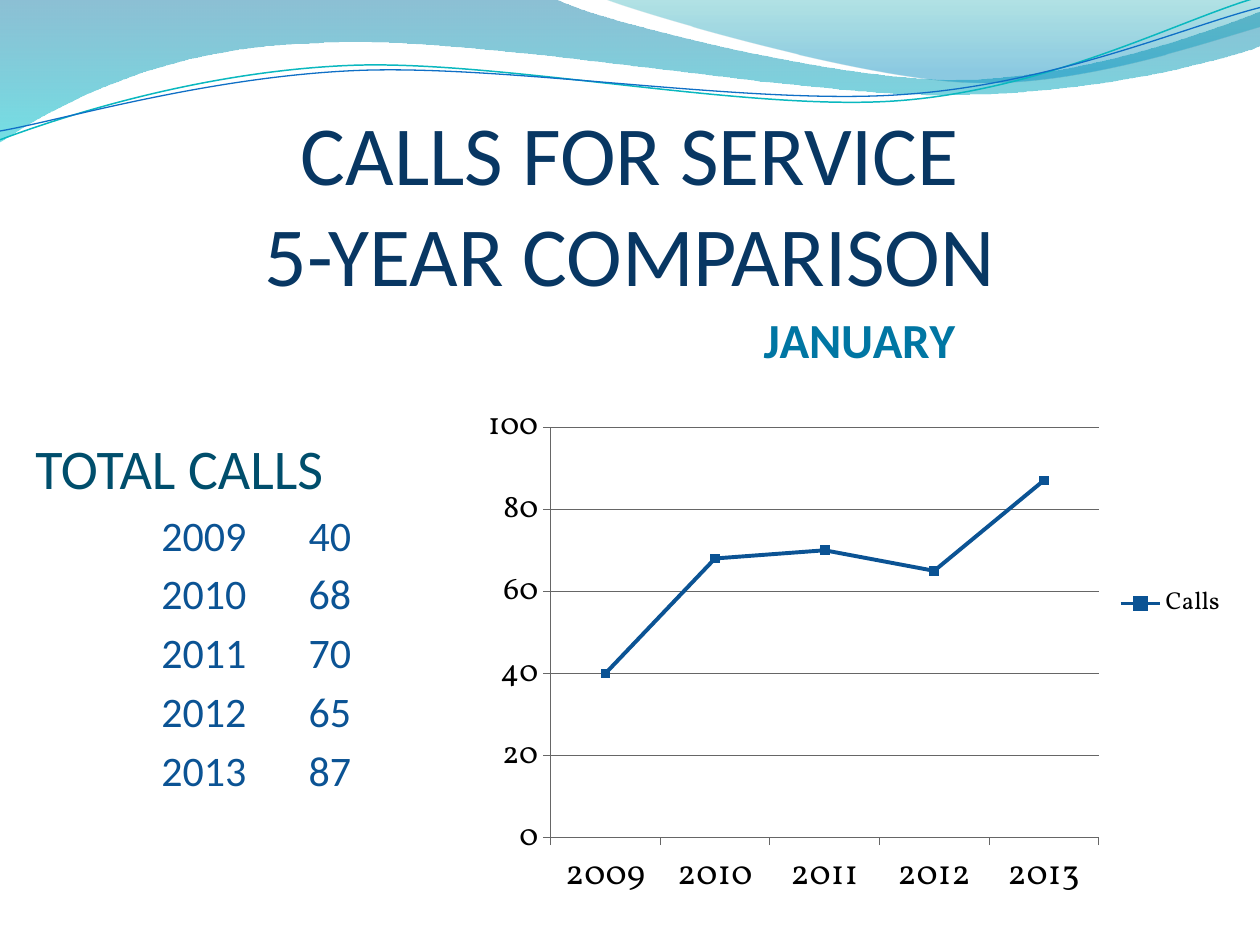
from dataclasses import dataclass

from lxml.etree import SubElement
from pptx import Presentation
from pptx.chart.data import CategoryChartData
from pptx.dml.color import RGBColor
from pptx.enum.chart import (XL_CHART_TYPE as ChartType, XL_LEGEND_POSITION as LegendPosition,
                             XL_MARKER_STYLE as Marker, XL_TICK_MARK as Tick)
from pptx.enum.text import MSO_ANCHOR as Anchor, MSO_AUTO_SIZE as AutoSize, PP_ALIGN as Align
from pptx.oxml import parse_xml
from pptx.oxml.ns import nsdecls, qn
from pptx.util import Inches, Pt


@dataclass(frozen=True)
class Theme:
    text_font: str = "Calibri"
    chart_font: str = "Vollkorn"
    title: str = "083763"
    heading: str = "004E6C"
    rows: str = "0B5394"
    chart_title: str = "0076A3"
    chart_text: str = "000000"
    grid: str = "666666"
    title_size: int = 48
    heading_size: int = 32
    row_size: int = 24
    chart_title_size: int = 28
    category_size: int = 20
    value_size: int = 18
    legend_size: int = 14


theme = Theme()
calls = {"2009": 40, "2010": 68, "2011": 70, "2012": 65, "2013": 87}


def style_font(font, size, color, name=theme.text_font, bold=False):
    values = {"size": Pt(size), "name": name, "bold": bold}
    for key, value in values.items():
        setattr(font, key, value)
    font.color.rgb = RGBColor.from_string(color)


def add_wave(page, start, segments, closed):
    """Outline of cubic curves (6 numbers) and straight lines (2 numbers), in inches."""
    corners = [(Inches(x), Inches(y)) for segment in segments
               for x, y in zip(segment[::2], segment[1::2])]
    builder = page.shapes.build_freeform(Inches(start[0]), Inches(start[1]), scale=1.0)
    builder.add_line_segments(corners, close=closed)
    wave = builder.convert_to_shape()
    wave.shadow.inherit = False
    # Join each three points of a curve into one cubic step
    steps = iter(list(wave._element.iter(qn("a:lnTo"))))
    for segment in segments:
        group = [next(steps) for _ in range(len(segment) // 2)]
        if len(group) == 3:
            curve = SubElement(group[0].getparent(), qn("a:cubicBezTo"))
            group[0].addprevious(curve)
            for step in group:
                curve.append(step[0])
                step.getparent().remove(step)
    return wave


deck = Presentation()
deck.slide_width, deck.slide_height = Inches(10), Inches(7.5)
page = deck.slides.add_slide(deck.slide_layouts[1])

# Translucent wave bands: start, segments, gradient stops (position, colour, opacity)
bands = [
    ((0, 0), [(4.4, -0.01), (4.76, 0.17, 6.64, 0.63, 7.58, 0.63),
              (8.53, 0.63, 9.58, 0.26, 10, 0.09), (10.01, 0.36),
              (9.83, 0.44, 8.7, 0.76, 7.46, 0.75), (6.22, 0.75, 3.82, 0.28, 2.57, 0.34),
              (1.29, 0.36, 0.46, 0.83, -0.01, 1.13)],
     [(0, "0074A1", 45), (100, "00C6CF", 55)]),
    ((4.79, -0.01), [(5.09, 0.11, 6.82, 0.62, 7.69, 0.65),
                     (8.56, 0.69, 9.61, 0.32, 10, 0.21), (10, 0)],
     [(0, "00A1A9", 30), (80, "008BBF", 45)]),
]
for start, segments, stops in bands:
    band = add_wave(page, start, segments, True)
    band.line.fill.background()
    band.fill.gradient()
    gradient = band.fill._xPr.find(qn("a:gradFill"))
    gradient.find(qn("a:lin")).set("ang", "5400000")
    stop_list = gradient.find(qn("a:gsLst"))
    stop_list.clear()
    for position, color, opacity in stops:
        stop = SubElement(stop_list, qn("a:gs"), pos=str(position * 1000))
        tint = SubElement(stop, qn("a:srgbClr"), val=color)
        SubElement(tint, qn("a:alpha"), val=str(opacity * 1000))

# Thin wave lines
strands = [
    ((0, 1.11), [(0.48, 0.93, 1.58, 0.57, 2.77, 0.52), (3.95, 0.47, 5.93, 0.89, 7.13, 0.8),
                 (8.33, 0.71, 9.38, 0.15, 9.98, -0.02)], "0AB8BF", 0.85),
    ((0, 1.04), [(0.47, 0.96, 1.64, 0.61, 2.83, 0.56), (4.03, 0.51, 5.97, 0.84, 7.17, 0.75),
                 (8.36, 0.67, 9.41, 0.21, 10, 0.06)], "0F6FC6", 0.75),
]
for start, segments, color, width in strands:
    strand = add_wave(page, start, segments, False)
    strand.fill.background()
    strand.line.color.rgb = RGBColor.from_string(color)
    strand.line.width = Pt(width)

# Title and list placeholders
title, body = page.shapes.title, page.placeholders[1]
frames = [
    (title, (0.5, 1.16, 9, 1.25), Anchor.BOTTOM, (0, 0.05, 0, 0)),
    (body, (-0.25, 3.39, 3.92, 4.07), Anchor.TOP, (0.41, 0.05, 0.1, 0.05)),
]
for box, place, anchor, insets in frames:
    for side, value in zip(("left", "top", "width", "height"), place):
        setattr(box, side, Inches(value))
    for side, value in zip(("left", "top", "right", "bottom"), insets):
        setattr(box.text_frame, f"margin_{side}", Inches(value))
    box.text_frame.auto_size = AutoSize.NONE
    box.text_frame.vertical_anchor = anchor
    box.text_frame.word_wrap = True

title.text_frame.text = "CALLS FOR SERVICE\v5-YEAR COMPARISON"
heading = title.text_frame.paragraphs[0]
heading.alignment = Align.CENTER
for span in heading.runs:
    style_font(span.font, theme.title_size, theme.title)

# Total calls: indented years, counts on the half-inch tab grid
lines = ["TOTAL CALLS"] + [f"{year}\t\t{count}" for year, count in calls.items()]
body.text_frame.text = "\n".join(lines)
for index, para in enumerate(body.text_frame.paragraphs):
    size, color, margin = ((theme.row_size, theme.rows, 1) if index
                           else (theme.heading_size, theme.heading, 0))
    para.space_before = Pt(size * 0.2)
    for span in para.runs:
        style_font(span.font, size, color)
    settings = para._p.get_or_add_pPr()
    for key, value in {"marL": margin, "indent": 0.12, "defTabSz": 0.5}.items():
        settings.set(key, str(Inches(value)))
    SubElement(settings, qn("a:buNone"))

# Line chart
chart_left, chart_top, chart_width, chart_height = 3.75, 2.33, 6.08, 4.92
data = CategoryChartData()
data.categories = list(calls)
data.add_series("Calls", list(calls.values()))
chart = page.shapes.add_chart(ChartType.LINE_MARKERS, Inches(chart_left), Inches(chart_top),
                              Inches(chart_width), Inches(chart_height), data).chart
style_font(chart.font, 10, theme.chart_text, theme.chart_font)
chart.has_title = True
chart.chart_title.include_in_layout = False
chart.chart_title.text_frame.text = "JANUARY"
style_font(chart.chart_title.text_frame.paragraphs[0].runs[0].font,
           theme.chart_title_size, theme.chart_title, bold=True)
chart.has_legend = True
chart.legend.position = LegendPosition.RIGHT
chart.legend.include_in_layout = False
style_font(chart.legend.font, theme.legend_size, theme.chart_text, theme.chart_font)

value_axis = chart.value_axis
for key, value in {"minimum_scale": 0, "maximum_scale": 100, "major_unit": 20,
                   "has_major_gridlines": True}.items():
    setattr(value_axis, key, value)
for axis, size in ((chart.category_axis, theme.category_size), (value_axis, theme.value_size)):
    axis.major_tick_mark = Tick.OUTSIDE
    style_font(axis.tick_labels.font, size, theme.chart_text, theme.chart_font)
for rule in (chart.category_axis, value_axis, value_axis.major_gridlines):
    rule.format.line.color.rgb = RGBColor.from_string(theme.grid)
    rule.format.line.width = Pt(0.5)

plot = chart.plots[0]
plot.vary_by_categories = False
series = plot.series[0]
series.smooth = False
series.format.line.width = Pt(2.25)
series.marker.style, series.marker.size = Marker.SQUARE, 5
series.marker.format.fill.solid()
for color in (series.format.line.color, series.marker.format.line.color,
              series.marker.format.fill.fore_color):
    color.rgb = RGBColor.from_string(theme.rows)

# Fixed places for the plot area and chart title, as shares of the chart
plot_area = chart._chartSpace.find(".//" + qn("c:plotArea"))
title_part = chart._chartSpace.find(".//" + qn("c:title"))
edges = [("xMode", "edge"), ("yMode", "edge")]
places = [
    (plot_area, 0, [("layoutTarget", "inner")] + edges +
     [("x", (4.37 - chart_left) / chart_width), ("y", (3.39 - chart_top) / chart_height),
      ("w", 4.35 / chart_width), ("h", 3.26 / chart_height)]),
    (title_part, 1, edges +
     [("x", (5.99 - chart_left) / chart_width), ("y", (2.36 - chart_top) / chart_height)]),
]
for part, position, values in places:
    for old in part.findall(qn("c:layout")):
        part.remove(old)
    layout = parse_xml(f"<c:layout {nsdecls('c')}><c:manualLayout/></c:layout>")
    for tag, value in values:
        SubElement(layout[0], qn(f"c:{tag}"), val=str(value))
    part.insert(position, layout)

deck.save("out.pptx")
